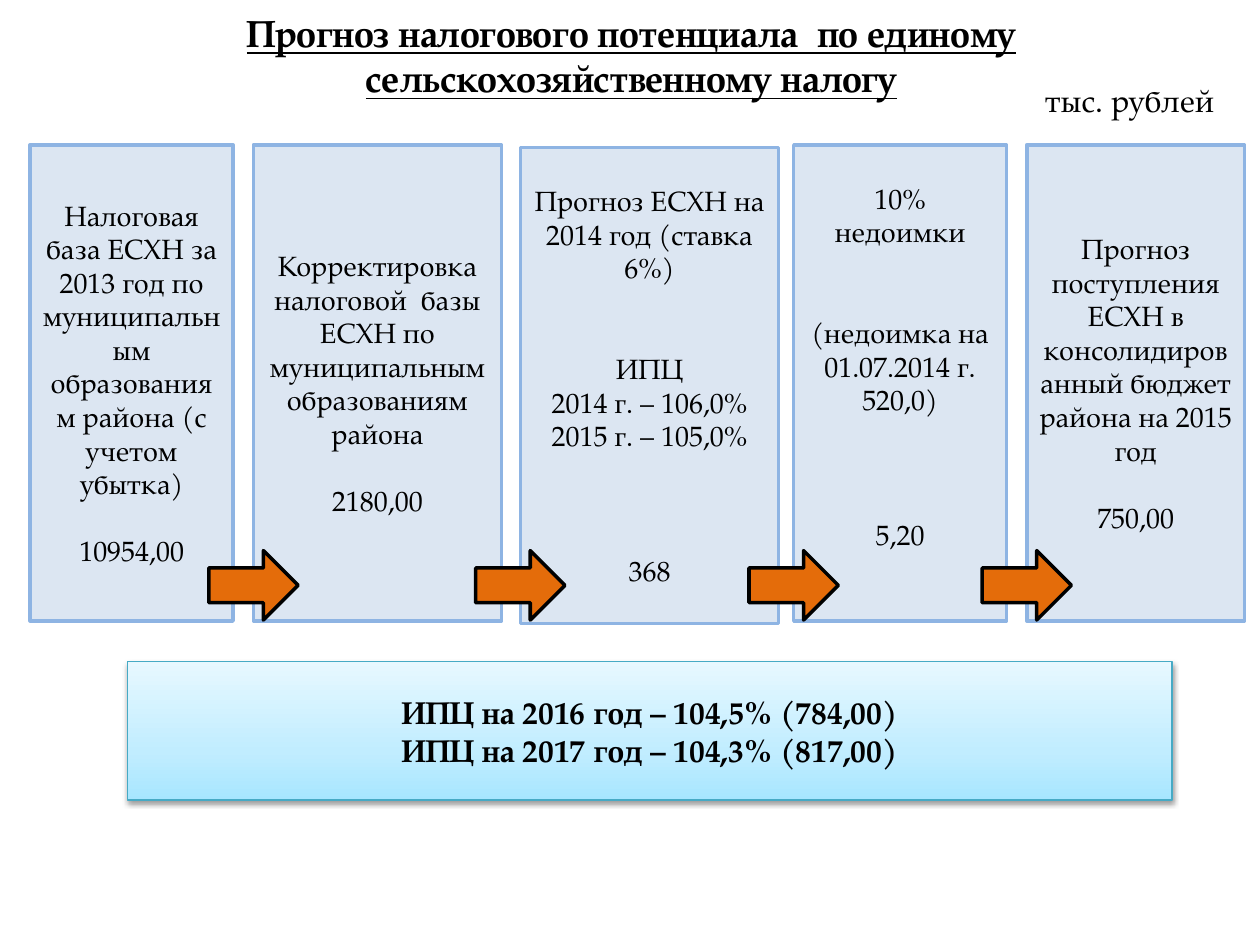
import copy
import pptx
import pptx.util
import pptx.dml.color
import pptx.enum.shapes
import pptx.enum.text
import pptx.oxml
import pptx.oxml.ns

Cm, Pt = pptx.util.Cm, pptx.util.Pt
KIND = pptx.enum.shapes.MSO_SHAPE
FONT = "TeX Gyre Pagella"
LINE = 19.2  # height of one 16 pt text line, in points

# Content
TITLE = "Прогноз налогового потенциала  по единому сельскохозяйственному налогу"
UNIT = "тыс. рублей"
# Steps: left, top, width, lines left free at the bottom, (text, lines free above)
STEPS = [
    (0.61, 2.92, 4.09, 0, [
        ("Налоговая база ЕСХН за 2013 год по муниципальным образованиям "
         "района (с учетом убытка)", 0),
        ("10954,00", 1)]),
    (5.11, 2.92, 5.0, 0, [
        ("Корректировка налоговой  базы ЕСХН по муниципальным "
         "образованиям района", 0),
        ("2180,00", 1)]),
    (10.49, 2.97, 5.21, 0, [
        ("Прогноз ЕСХН на 2014 год (ставка 6%)", 0),
        ("ИПЦ", 2),
        ("2014 г. – 106,0%", 0),
        ("2015 г. – 105,0%", 0),
        ("368", 3)]),
    (16.0, 2.92, 4.29, 1, [
        ("10% недоимки", 0),
        ("(недоимка на 01.07.2014 г. 520,0)", 2),
        ("5,20", 3)]),
    (20.7, 2.92, 4.39, 0, [
        ("Прогноз поступления ЕСХН в консолидированный бюджет района "
         "на 2015 год", 0),
        ("750,00", 1)]),
]
INDEX = [("ИПЦ на 2016 год – 104,5% (784,00)", 0),
         ("ИПЦ на 2017 год – 104,3% (817,00)", 0)]
GRAD = [(0, "A7E6FF"), (0.35, "C1EDFF"), (1, "E7F8FF")]


def rgb(hue):
    return pptx.dml.color.RGBColor.from_string(hue)


def place(shape, left, top, width, height):
    shape.left, shape.top = Cm(left), Cm(top)
    shape.width, shape.height = Cm(width), Cm(height)


def write(shape, lines, size, bold=False, under=False):
    frame = shape.text_frame
    frame.word_wrap = True
    frame.vertical_anchor = pptx.enum.text.MSO_ANCHOR.MIDDLE
    frame.text = "\n".join(text for text, gap in lines)
    for para, (text, gap) in zip(frame.paragraphs, lines):
        para.alignment = pptx.enum.text.PP_ALIGN.CENTER
        if gap:
            para.space_before = Pt(gap * LINE)
        for run in para.runs:
            font = run.font
            font.name, font.size = FONT, Pt(size)
            font.bold, font.underline = bold, under
            font.color.rgb = rgb("000000")


def draw(kind, box, fill, line, width):
    shape = slide.shapes.add_shape(kind, *map(Cm, box))
    shape.shadow.inherit = False
    if fill:
        shape.fill.solid()
        shape.fill.fore_color.rgb = rgb(fill)
    shape.line.color.rgb = rgb(line)
    shape.line.width = Pt(width)
    return shape


def shade(shape):
    """Three-stop gradient, light at the top, with a soft shadow below."""
    shape.fill.gradient()
    shape.fill.gradient_angle = 90
    stops = shape.fill.gradient_stops
    first = stops[0]._gs
    first.addnext(copy.deepcopy(first))
    for stop, (pos, hue) in zip(shape.fill.gradient_stops, GRAD):
        stop.position = pos
        stop.color.rgb = rgb(hue)
    effects = shape._element.spPr.find(pptx.oxml.ns.qn("a:effectLst"))
    effects.append(pptx.oxml.parse_xml(
        f'<a:outerShdw {pptx.oxml.ns.nsdecls("a")} blurRad="{Pt(3.1)}" '
        f'dist="{Pt(1.6)}" dir="5400000" rotWithShape="0">'
        '<a:srgbClr val="000000"><a:alpha val="38000"/></a:srgbClr>'
        '</a:outerShdw>'))


deck = pptx.Presentation()
deck.slide_width, deck.slide_height = Cm(25.4), Cm(19.05)
slide = deck.slides.add_slide(deck.slide_layouts[5])

# Title
title = slide.shapes.title
place(title, 1.3, 0.03, 22.86, 2.16)
write(title, [(TITLE, 0)], 21.6, bold=True, under=True)

# Steps
for left, top, width, free, lines in STEPS:
    step = draw(KIND.RECTANGLE, (left, top, width, 9.6), "DCE6F2", "8EB4E3", 2)
    write(step, lines, 16)
    step.text_frame.margin_bottom = Cm(0.13) + Pt(free * LINE)

# Arrows, each reaching into the next step
for left, *rest in STEPS[1:]:
    draw(KIND.RIGHT_ARROW, (left - 0.9, 11.1, 1.8, 1.4), "E46C0A", "000000", 2)

# Price index band
band = draw(KIND.RECTANGLE, (2.57, 13.34, 21.06, 2.79), None, "46AAC5", 0.75)
shade(band)
write(band, INDEX, 18, bold=True)

# Unit
unit = slide.shapes.add_textbox(Cm(20.68), Cm(1.52), Cm(4.19), Cm(0.99))
write(unit, [(UNIT, 0)], 18)

deck.save("out.pptx")
